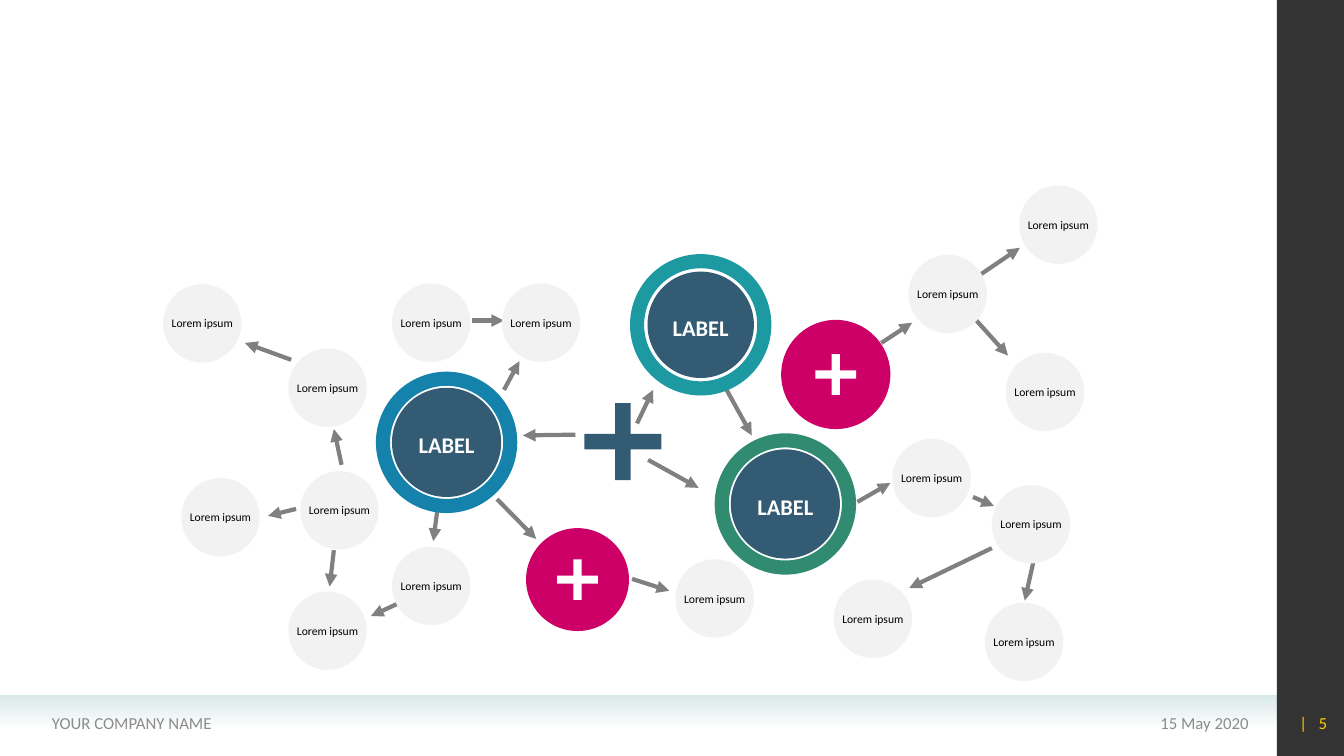
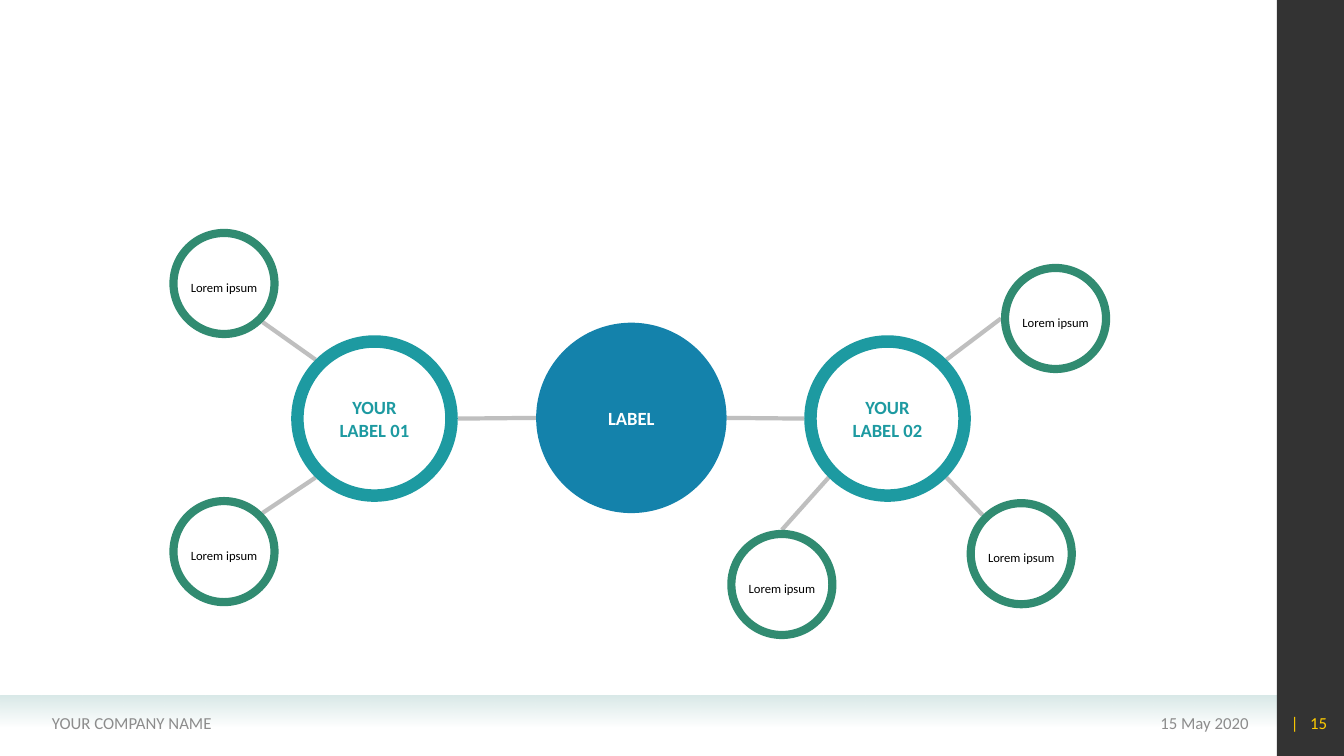
from math import cos, radians, sin

from lxml.etree import SubElement
from pptx import Presentation
from pptx.dml.color import RGBColor
from pptx.enum.shapes import MSO_CONNECTOR, MSO_SHAPE
from pptx.enum.text import MSO_ANCHOR, PP_ALIGN
from pptx.oxml.ns import qn
from pptx.util import Pt

FONT = "Calibri"
BLACK, WHITE, NAVY = "000000", "FFFFFF", "335B74"
BLUE, TEAL, GREEN, PINK = "1482AB", "1D9AA1", "318B71", "CC0066"
MIST, PALE, FOOTER_GREY, YELLOW = "D9E9E8", "F2F2F2", "8C8C8C", "FFCC00"
ARROW_GREY, LINK_GREY = "808080", "BFBFBF"

LEAF_SIZE = 56
LEAVES = [
    (756, 160.5), (677, 210), (746.5, 280), (736.5, 374.5),
    (665.5, 341.5), (623.5, 442), (308, 230.5), (731.5, 458.5),
    (386.5, 230.5), (234, 277), (144.5, 231), (157.5, 369.5),
    (242.5, 364.5), (308, 418.5), (234, 450.5), (510.5, 427.5),
]
ARROWS = [
    ((629.5, 245), (651.5, 230.5)), ((700.5, 196), (728.5, 177)),
    ((697.5, 229), (720, 254)), ((455, 302.5), (466.5, 278.5)),
    ((612.5, 358.5), (636, 345)), ((695, 355), (710, 361.5)),
    ((708.5, 391.5), (649.5, 420)), ((738, 402), (732, 429)),
    ((463, 328.5), (499, 348.5)), ((411, 310.5), (373.5, 311)),
    ((451.5, 413.5), (478, 422)), ((519, 278.5), (537, 311)),
    ((312.5, 363.5), (309.5, 386.5)), ((355, 356.5), (383, 385)),
    ((238.5, 393), (235.5, 419)), ((211.5, 363.5), (191.5, 368.5)),
    ((283.5, 431.5), (265, 440)), ((208, 257), (175, 245)),
    ((244, 332), (238.5, 306.5)), ((360, 278.5), (371, 258)),
    ((337.5, 229), (360, 229)),
]
RINGED_LABELS = [
    ((500.5, 232), 76, TEAL),
    ((319, 316), 78, BLUE),
    ((561, 360), 78, GREEN),
]
PLUS_DISCS = [((412.5, 414), 73.5), ((597, 267.5), 78)]

HUB = ((451, 298.5), 136)
LEFT_RING = ((267.5, 299), 119)
RIGHT_RING = ((634, 299), 119)
SATELLITE_SIZE = 78
SATELLITES = [
    ((160, 202.5), 45, LEFT_RING, 225),
    ((160, 394), -45, LEFT_RING, 135),
    ((729.5, 395.5), 225, RIGHT_RING, 45),
    ((558.5, 417.5), -90, RIGHT_RING, 135),
    ((754, 227.5), 180, RIGHT_RING, -45),
]


def color(value):
    return RGBColor.from_string(value)


def set_alpha(shape, percent):
    last_color = shape._element.xpath(".//a:srgbClr")[-1]
    SubElement(last_color, qn("a:alpha")).set("val", str(percent * 1000))


def style_text(frame, size, ink, bold=False, align=PP_ALIGN.CENTER):
    frame.vertical_anchor = MSO_ANCHOR.MIDDLE
    for paragraph in frame.paragraphs:
        paragraph.alignment = align
        paragraph.font.name = FONT
        paragraph.font.size = Pt(size)
        paragraph.font.bold = bold
        paragraph.font.color.rgb = color(ink)


def add_block(page, kind, left, top, width, height, fill):
    block = page.shapes.add_shape(kind, Pt(left), Pt(top), Pt(width), Pt(height))
    block.shadow.inherit = False
    block.line.fill.background()
    block.fill.solid()
    block.fill.fore_color.rgb = color(fill)
    return block


def add_round(page, center, size, fill, kind=MSO_SHAPE.OVAL, adjustment=None):
    x, y = center
    shape = add_block(page, kind, x - size / 2, y - size / 2, size, size, fill)
    if adjustment is not None:
        shape.adjustments[0] = adjustment
    return shape


def add_label(shape, text, size, ink, bold=False, top_inset=0):
    frame = shape.text_frame
    frame.word_wrap = False
    frame.margin_left = frame.margin_right = frame.margin_bottom = 0
    frame.margin_top = Pt(top_inset)
    frame.text = text
    style_text(frame, size, ink, bold)


def add_line(page, start, end, ink, arrow=False):
    points = [Pt(value) for value in (*start, *end)]
    line = page.shapes.add_connector(MSO_CONNECTOR.STRAIGHT, *points)
    line.line.color.rgb = color(ink)
    line.line.width = Pt(3)
    if arrow:
        SubElement(line.line._get_or_add_ln(), qn("a:tailEnd")).set("type", "triangle")
    SubElement(line._element.spPr, qn("a:effectLst"))


def rim_point(circle, angle):
    (x, y), size = circle
    turn = radians(angle)
    return x + size / 2 * cos(turn), y + size / 2 * sin(turn)


def add_footer(page, left, width, text, ink, align):
    box = page.shapes.add_textbox(Pt(left), Pt(502), Pt(width), Pt(29))
    frame = box.text_frame
    frame.word_wrap = True
    frame.text = text
    style_text(frame, 12, ink, align=align)
    return frame.paragraphs[0]


def add_page(deck, number):
    page = deck.slides.add_slide(deck.slide_layouts[6])
    band = add_block(page, MSO_SHAPE.RECTANGLE, 0, 497, 912, 22, MIST)
    band.fill.gradient()
    band.fill.gradient_angle = 270
    for stop in band.fill.gradient_stops:
        stop.color.rgb = color(MIST)
    set_alpha(band, 0)
    sidebar = add_block(page, MSO_SHAPE.RECTANGLE, 912, 0, 48, 540, BLACK)
    set_alpha(sidebar, 80)
    add_footer(page, 655, 244, "15 May 2020", FOOTER_GREY, PP_ALIGN.RIGHT)
    add_footer(page, 30, 353, "YOUR COMPANY NAME", FOOTER_GREY, PP_ALIGN.LEFT)
    para = add_footer(page, 907, 48, "| ", YELLOW, PP_ALIGN.RIGHT)
    para.runs[0].font._element.set("spc", "270")
    span = para.add_run()
    span.text = str(number)
    return page


def build_network(deck):
    page = add_page(deck, 5)
    for start, end in ARROWS:
        add_line(page, start, end, ARROW_GREY, arrow=True)
    for center in LEAVES:
        leaf = add_round(page, center, LEAF_SIZE, PALE)
        add_label(leaf, "Lorem ipsum", 8.3, BLACK)
    for center, core_size, ring_color in RINGED_LABELS:
        core = add_round(page, center, core_size, NAVY)
        add_label(core, "LABEL", 16, WHITE, bold=True, top_inset=3.6)
        add_round(page, center, 101, ring_color, MSO_SHAPE.DONUT, 0.1)
    add_round(page, (445, 315.5), 55, NAVY, MSO_SHAPE.CROSS, 0.4)
    for center, size in PLUS_DISCS:
        add_round(page, center, size, PINK)
        add_round(page, center, 29, WHITE, MSO_SHAPE.CROSS, 0.4)


def build_clusters(deck):
    page = add_page(deck, 15)
    for center, angle, ring, ring_angle in SATELLITES:
        start = rim_point((center, SATELLITE_SIZE), angle)
        add_line(page, start, rim_point(ring, ring_angle), LINK_GREY)
    add_line(page, rim_point(HUB, 0), rim_point(RIGHT_RING, 180), LINK_GREY)
    add_line(page, rim_point(LEFT_RING, 0), rim_point(HUB, 180), LINK_GREY)
    add_label(add_round(page, *HUB, BLUE), "LABEL", 13.3, WHITE, bold=True)
    for ring, text in ((LEFT_RING, "YOUR\nLABEL 01"), (RIGHT_RING, "YOUR\nLABEL 02")):
        shape = add_round(page, *ring, TEAL, MSO_SHAPE.DONUT, 0.075)
        add_label(shape, text, 13.3, TEAL, bold=True)
    for center, *_ in SATELLITES:
        shape = add_round(page, center, SATELLITE_SIZE, GREEN, MSO_SHAPE.DONUT, 0.075)
        add_label(shape, "Lorem ipsum", 9, BLACK, top_inset=5)


def main():
    deck = Presentation()
    deck.slide_width, deck.slide_height = Pt(960), Pt(540)
    build_network(deck)
    build_clusters(deck)
    deck.save("out.pptx")


if __name__ == "__main__":
    main()
